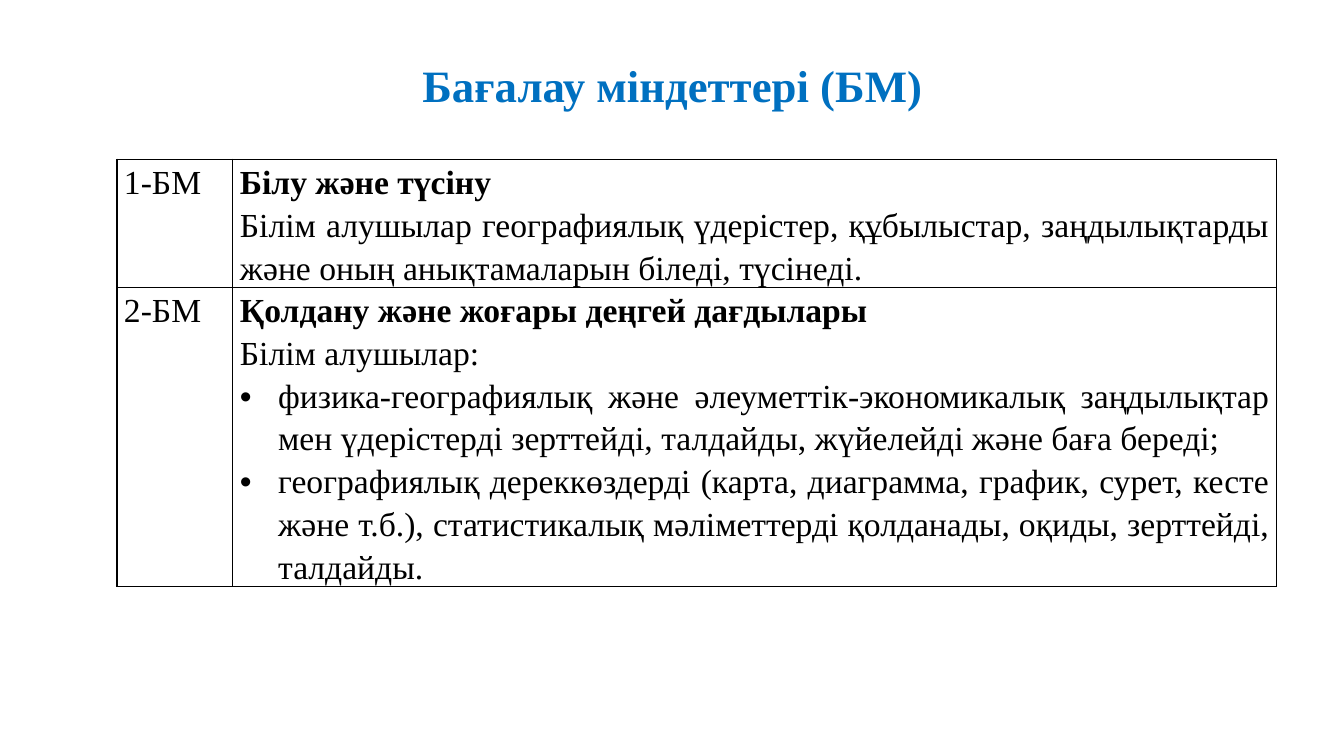
import pptx
import pptx.util
import pptx.dml.color
import pptx.enum.text
import pptx.oxml.ns
import lxml.etree

Inches = pptx.util.Inches
Pt = pptx.util.Pt
Align = pptx.enum.text.PP_ALIGN
Anchor = pptx.enum.text.MSO_ANCHOR

FONT = "Times New Roman"
COLOURS = {"title": "0070C0", "text": "000000", "border": "000000"}
COLUMN_WIDTHS = (1.15, 10.35)
ROW_HEIGHTS = (1.27, 2.97)
OBJECTIVES = [
    ("1-БМ", [
        ("Білу және түсіну", "heading"),
        ("Білім алушылар географиялық үдерістер, құбылыстар, заңдылықтарды "
         "және оның анықтамаларын біледі, түсінеді.", "body"),
    ]),
    ("2-БМ", [
        ("Қолдану және жоғары деңгей дағдылары", "heading"),
        ("Білім алушылар:", "body"),
        ("физика-географиялық және әлеуметтік-экономикалық заңдылықтар мен "
         "үдерістерді зерттейді, талдайды, жүйелейді және баға береді;", "bullet"),
        ("географиялық дереккөздерді (карта, диаграмма, график, сурет, кесте "
         "және т.б.), статистикалық мәліметтерді қолданады, оқиды, зерттейді, "
         "талдайды.", "bullet"),
    ]),
]


def apply_format(target, values):
    for name, value in values.items():
        setattr(target, name, value)


def add_element(parent, tag, **attributes):
    return lxml.etree.SubElement(parent, pptx.oxml.ns.qn(tag), attributes)


def add_text(para, text, size, colour, bold=False):
    span = para.add_run()
    span.text = text
    apply_format(span.font, {"name": FONT, "size": Pt(size), "bold": bold})
    span.font.color.rgb = pptx.dml.color.RGBColor.from_string(COLOURS[colour])


def add_bullet(para):
    properties = para._p.get_or_add_pPr()
    indent = Inches(0.38)
    properties.set("marL", str(indent))
    properties.set("indent", str(-indent))
    add_element(properties, "a:buFont", typeface="Arial")
    add_element(properties, "a:buChar", char="•")


def add_borders(cell):
    properties = cell._tc.get_or_add_tcPr()
    for side in ("a:lnL", "a:lnR", "a:lnT", "a:lnB"):
        line = add_element(properties, side, w=str(Pt(1)))
        fill = add_element(line, "a:solidFill")
        add_element(fill, "a:srgbClr", val=COLOURS["border"])


def fill_cell(cell, paragraphs):
    add_borders(cell)
    cell.fill.background()
    apply_format(cell, {
        "margin_left": Inches(0.07), "margin_right": Inches(0.07),
        "margin_top": 0, "margin_bottom": 0, "vertical_anchor": Anchor.TOP,
    })
    frame = cell.text_frame
    for index, (text, kind) in enumerate(paragraphs):
        para = frame.add_paragraph() if index else frame.paragraphs[0]
        alignment = Align.LEFT if kind == "label" else Align.JUSTIFY
        apply_format(para, {"alignment": alignment, "line_spacing": 1.15})
        if kind == "bullet":
            add_bullet(para)
        add_text(para, text, 24, "text", kind == "heading")


def set_title(page, text):
    title = page.shapes.title
    apply_format(title, {
        "left": Inches(0.92), "top": Inches(0.4),
        "width": Inches(11.5), "height": Inches(1.45),
    })
    apply_format(title.text_frame, {
        "vertical_anchor": Anchor.MIDDLE, "margin_bottom": Inches(0.55),
        "word_wrap": True,
    })
    para = title.text_frame.paragraphs[0]
    apply_format(para, {"alignment": Align.CENTER, "line_spacing": 0.9})
    add_text(para, text, 32, "title", True)


def add_objectives(page):
    table = page.shapes.add_table(
        len(OBJECTIVES), len(COLUMN_WIDTHS), Inches(1.16), Inches(1.58),
        Inches(sum(COLUMN_WIDTHS)), Inches(sum(ROW_HEIGHTS))).table
    apply_format(table, {"first_row": False, "horz_banding": False})
    for column, width in zip(table.columns, COLUMN_WIDTHS):
        column.width = Inches(width)
    for row, height, (label, paragraphs) in zip(table.rows, ROW_HEIGHTS, OBJECTIVES):
        row.height = Inches(height)
        fill_cell(row.cells[0], [(label, "label")])
        fill_cell(row.cells[1], paragraphs)


def main():
    deck = pptx.Presentation()
    apply_format(deck, {"slide_width": Inches(13.33), "slide_height": Inches(7.5)})
    page = deck.slides.add_slide(deck.slide_layouts.get_by_name("Title Only"))
    set_title(page, "Бағалау міндеттері (БМ)")
    add_objectives(page)
    deck.save("out.pptx")


if __name__ == "__main__":
    main()
